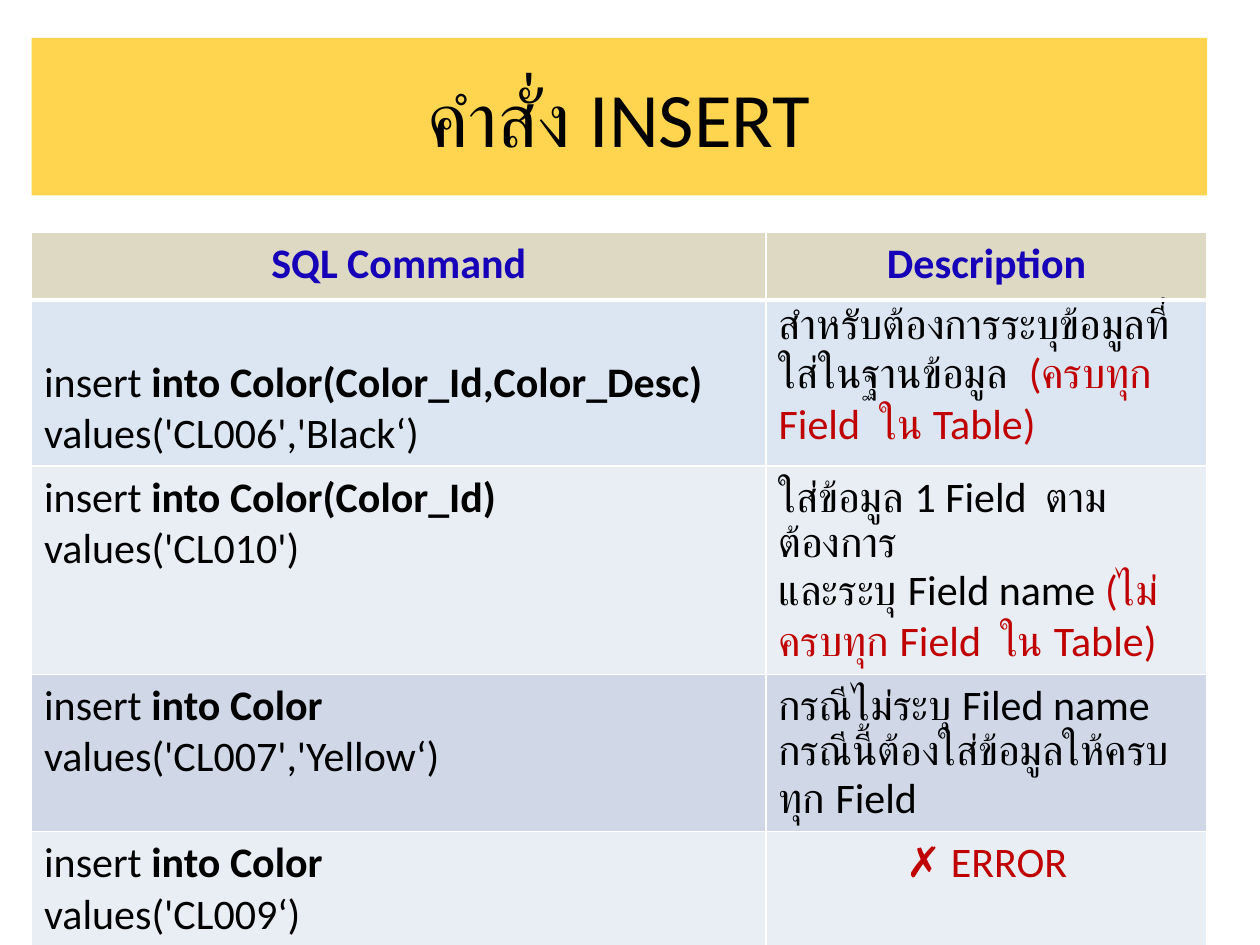
from lxml import etree
from pptx import Presentation, util as u
from pptx.dml.color import RGBColor
from pptx.enum import text
from pptx.oxml.ns import qn

FONT = "Calibri"
BLACK, BLUE, RED, WHITE = "000000", "1600B8", "C00000", "FFFFFF"
LEFT, WIDTH = 0.25, 9.33
COLUMNS = (5.83, 3.5)
TITLE = "คำสั่ง INSERT"
HEADINGS = ("SQL Command", "Description")
HEADER_FILL, HEADER_HEIGHT = "DDD9C3", 0.54

# Height, fill, target of the insert, its values, description paragraphs of (text, colour)
COMMANDS = [
    (1.32, "DCE6F2", "Color(Color_Id,Color_Desc)", "values('CL006','Black‘)",
     [[("สำหรับต้องการระบุข้อมูลที่ใส่ในฐานข้อมูล  ", BLACK),
       ("(ครบทุก Field  ใน Table)", RED)]]),
    (0.92, "E9EDF4", "Color(Color_Id)", "values('CL010')",
     [[("ใส่ข้อมูล 1 Field  ตามต้องการ", BLACK)],
      [("และระบุ Field name ", BLACK), ("(ไม่ครบทุก Field  ใน Table)", RED)]]),
    (1.05, "D0D8E8", "Color", "values('CL007','Yellow‘)",
     [[("กรณีไม่ระบุ Filed name กรณีนี้ต้องใส่ข้อมูลให้ครบทุก Field", BLACK)]]),
    (0.9, "E9EDF4", "Color", "values('CL009‘)",
     [[("✗ ERROR", RED)]]),
]


def rgb(value):
    return RGBColor.from_string(value)


def add_run(p, words, color=BLACK, bold=False, size=24):
    r = p.add_run()
    r.text = words
    r.font.name, r.font.size, r.font.bold = FONT, u.Pt(size), bold
    r.font.color.rgb = rgb(color)


def set_borders(cell, bottom):
    """Draw white borders; they must come before the fill in the cell's XML."""
    tcPr = cell._tc.get_or_add_tcPr()
    for i, (side, width) in enumerate(zip("LRTB", (1, 1, 1, bottom))):
        ln = etree.Element(qn(f"a:ln{side}"), w=str(u.Pt(width)))
        fill = etree.SubElement(ln, qn("a:solidFill"))
        etree.SubElement(fill, qn("a:srgbClr"), val=WHITE)
        tcPr.insert(i, ln)


def fill_cell(cell, fill, paragraphs, bottom=1, centred=False):
    """Each paragraph is a list of (text, colour[, bold]) runs."""
    cell.fill.solid()
    cell.fill.fore_color.rgb = rgb(fill)
    set_borders(cell, bottom)
    tf = cell.text_frame
    for i, runs in enumerate(paragraphs):
        p = tf.add_paragraph() if i else tf.paragraphs[0]
        p.alignment = text.PP_ALIGN.CENTER if centred else text.PP_ALIGN.LEFT
        for run in runs:
            add_run(p, *run)


def add_title(s):
    sp = s.shapes.title
    sp.left, sp.top, sp.width, sp.height = map(u.Inches, (LEFT, 0.3, WIDTH, 1.25))
    sp.fill.solid()
    sp.fill.fore_color.rgb = rgb("FFD54F")
    tf = sp.text_frame
    tf.vertical_anchor = text.MSO_ANCHOR.MIDDLE
    p = tf.paragraphs[0]
    p.alignment = text.PP_ALIGN.CENTER
    add_run(p, TITLE, size=44)


def add_commands(s):
    heights = [HEADER_HEIGHT] + [command[0] for command in COMMANDS]
    table = s.shapes.add_table(len(heights), len(COLUMNS), u.Inches(LEFT), u.Inches(1.84),
                               u.Inches(WIDTH), u.Inches(sum(heights))).table
    for column, width in zip(table.columns, COLUMNS):
        column.width = u.Inches(width)
    for row, height in zip(table.rows, heights):
        row.height = u.Inches(height)

    for c, heading in enumerate(HEADINGS):
        fill_cell(table.cell(0, c), HEADER_FILL, [[(heading, BLUE, True)]], 3, True)
    for r, (_, fill, target, values, description) in enumerate(COMMANDS, 1):
        command = [[("insert", BLACK), (f" into {target}", BLACK, True)], [(values, BLACK)]]
        fill_cell(table.cell(r, 0), fill, command)
        fill_cell(table.cell(r, 1), fill, description, centred=r == len(COMMANDS))
    table.cell(1, 0).vertical_anchor = text.MSO_ANCHOR.BOTTOM


def main():
    prs = Presentation()
    prs.slide_width, prs.slide_height = u.Inches(10), u.Inches(7.5)
    s = prs.slides.add_slide(prs.slide_layouts[5])
    add_title(s)
    add_commands(s)
    prs.save("out.pptx")


if __name__ == "__main__":
    main()
